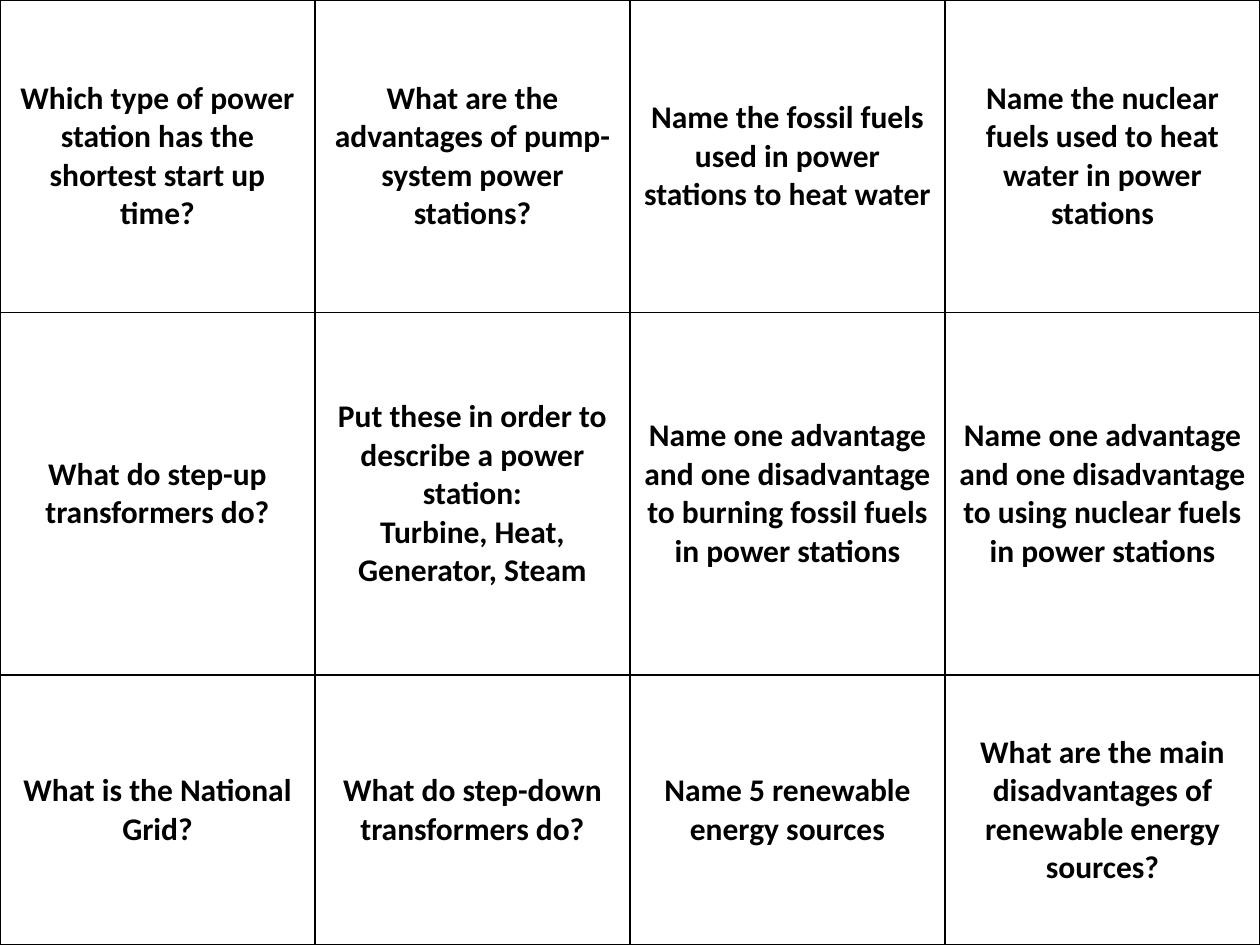
from lxml.etree import SubElement
from pptx import Presentation
from pptx.dml.color import RGBColor
from pptx.enum.text import MSO_ANCHOR, PP_ALIGN
from pptx.oxml.ns import qn
from pptx.util import Cm, Pt

WIDTH, HEIGHT = 25.4, 19.05
ROW_HEIGHTS = [6.3, 7.31, 5.44]
QUESTIONS = [
    [
        ["Which type of power station has the shortest start up time?"],
        ["What are the advantages of pump-system power stations?"],
        ["Name the fossil fuels used in power stations to heat water"],
        ["Name the nuclear fuels used to heat water in power stations"],
    ],
    [
        ["What do step-up transformers do?"],
        ["Put these in order to describe a power station:",
         "Turbine, Heat, Generator, Steam"],
        ["Name one advantage and one disadvantage to burning fossil fuels in power stations"],
        ["Name one advantage and one disadvantage to using nuclear fuels in power stations"],
    ],
    [
        ["What is the National Grid?"],
        ["What do step-down transformers do?"],
        ["Name 5 renewable energy sources"],
        ["What are the main disadvantages of renewable energy sources?"],
    ],
]


def color(value):
    return RGBColor.from_string(value)


class QuestionSlide:
    font = "Calibri"
    size = 18
    ink = "000000"
    paper = "FFFFFF"
    border = 1

    def __init__(self, prs):
        self.s = prs.slides.add_slide(prs.slide_layouts[6])

    def table(self, left, top, width, row_heights, rows):
        columns = len(rows[0])
        sp = self.s.shapes.add_table(len(rows), columns, Cm(left), Cm(top),
                                     Cm(width), Cm(sum(row_heights)))
        table = sp.table
        table.first_row = False
        table.horz_banding = False
        for column in table.columns:
            column.width = Cm(width / columns)
        for row, height, questions in zip(table.rows, row_heights, rows):
            row.height = Cm(height)
            for cell, lines in zip(row.cells, questions):
                self.cell(cell, lines)

    def cell(self, cell, lines):
        cell.vertical_anchor = MSO_ANCHOR.MIDDLE
        self.borders(cell)
        cell.fill.solid()
        cell.fill.fore_color.rgb = color(self.paper)
        tf = cell.text_frame
        for i, line in enumerate(lines):
            p = tf.add_paragraph() if i else tf.paragraphs[0]
            p.alignment = PP_ALIGN.CENTER
            r = p.add_run()
            r.text = line
            r.font.name = self.font
            r.font.size = Pt(self.size)
            r.font.bold = True
            r.font.color.rgb = color(self.ink)

    def borders(self, cell):
        props = cell._tc.get_or_add_tcPr()
        for side in ("a:lnL", "a:lnR", "a:lnT", "a:lnB"):
            line = SubElement(props, qn(side), w=str(Pt(self.border)))
            fill = SubElement(line, qn("a:solidFill"))
            SubElement(fill, qn("a:srgbClr"), val=self.ink)


def main():
    prs = Presentation()
    prs.slide_width, prs.slide_height = Cm(WIDTH), Cm(HEIGHT)
    slide = QuestionSlide(prs)
    slide.table(0, 0, WIDTH, ROW_HEIGHTS, QUESTIONS)
    prs.save("out.pptx")


if __name__ == "__main__":
    main()
